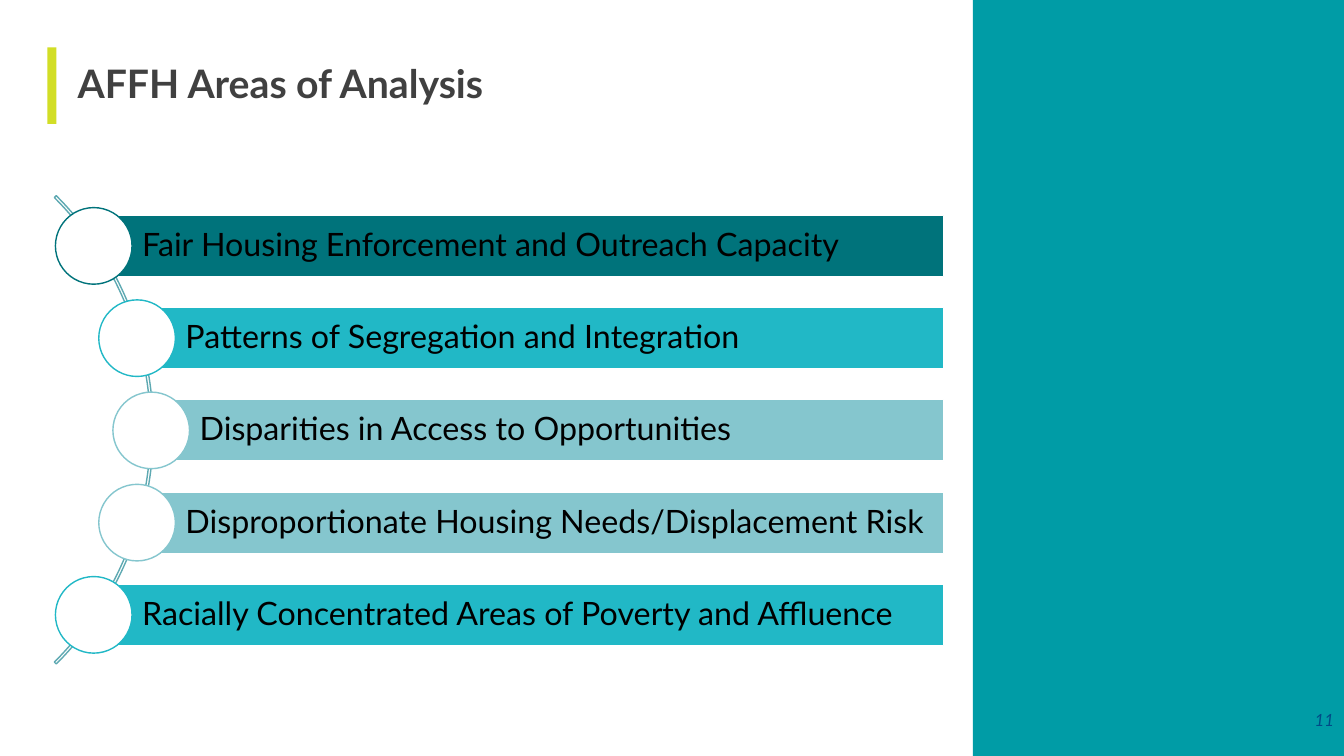
from pptx import Presentation
from pptx.dml.color import RGBColor
from pptx.enum.shapes import MSO_SHAPE
from pptx.enum.text import MSO_ANCHOR, MSO_AUTO_SIZE, PP_ALIGN
from pptx.util import Inches, Pt

WHITE = RGBColor(0xFF, 0xFF, 0xFF)
BLACK = RGBColor(0x00, 0x00, 0x00)
CHARCOAL = RGBColor(0x40, 0x40, 0x40)
NAVY = RGBColor(0x00, 0x4B, 0x87)
PANEL_TEAL = RGBColor(0x00, 0x9C, 0xA6)
LIME = RGBColor(0xD2, 0xDE, 0x26)
ARC_TEAL = RGBColor(0x5E, 0xA9, 0xB2)
DARK_TEAL = RGBColor(0x00, 0x73, 0x7B)
BRIGHT_TEAL = RGBColor(0x21, 0xB8, 0xC6)
PALE_TEAL = RGBColor(0x85, 0xC6, 0xCE)

SLIDE_WIDTH, SLIDE_HEIGHT = 13.33, 7.5
PANEL_LEFT = 9.65
ARC_SIZE = 6.57
BAR_RIGHT, BAR_HEIGHT = 9.36, 0.61
CIRCLE_SIZE = 0.76
FIRST_CENTER, ROW_STEP = 2.44, 0.915

AREAS = [
    ("Fair Housing Enforcement and Outreach Capacity", 0.93, DARK_TEAL),
    ("Patterns of Segregation and Integration", 1.36, BRIGHT_TEAL),
    ("Disparities in Access to Opportunities", 1.5, PALE_TEAL),
    ("Disproportionate Housing Needs/Displacement Risk", 1.36, PALE_TEAL),
    ("Racially Concentrated Areas of Poverty and Affluence", 0.93, BRIGHT_TEAL),
]


def add_figure(kind, left, top, width, height, fill=None, line=None):
    figure = page.shapes.add_shape(
        kind, Inches(left), Inches(top), Inches(width), Inches(height))
    figure.shadow.inherit = False
    if fill is None:
        figure.fill.background()
    else:
        figure.fill.solid()
        figure.fill.fore_color.rgb = fill
    if line is None:
        figure.line.fill.background()
    else:
        figure.line.color.rgb = line
        figure.line.width = Pt(1)
    return figure


def write_text(box, text, size, color, insets, align=PP_ALIGN.LEFT):
    frame = box.text_frame
    frame.word_wrap = True
    frame.auto_size = MSO_AUTO_SIZE.NONE
    frame.vertical_anchor = MSO_ANCHOR.MIDDLE
    (frame.margin_left, frame.margin_top,
     frame.margin_right, frame.margin_bottom) = [Inches(inset) for inset in insets]
    para = frame.paragraphs[0]
    para.alignment = align
    para.line_spacing = 0.9
    span = para.add_run()
    span.text = text
    span.font.name = "Lato"
    span.font.size = Pt(size)
    span.font.color.rgb = color
    return span


deck = Presentation()
deck.slide_width = Inches(SLIDE_WIDTH)
deck.slide_height = Inches(SLIDE_HEIGHT)
page = deck.slides.add_slide(deck.slide_layouts[5])

add_figure(MSO_SHAPE.RECTANGLE, PANEL_LEFT, 0,
           SLIDE_WIDTH - PANEL_LEFT, SLIDE_HEIGHT, PANEL_TEAL)
add_figure(MSO_SHAPE.RECTANGLE, 0.47, 0.47, 0.09, 0.76, LIME)

title = page.shapes.title
title.left, title.top = Inches(0.57), Inches(0.47)
title.width, title.height = Inches(5.89), Inches(0.76)
heading = write_text(title, "AFFH Areas of Analysis", 28, CHARCOAL, (0.2, 0, 0, 0))
heading.font.bold = True

arc = add_figure(MSO_SHAPE.BLOCK_ARC, -5.05, 0.98, ARC_SIZE, ARC_SIZE, line=ARC_TEAL)
for index, value in enumerate((189, 27, 0.004)):
    arc.adjustments[index] = value

for row, (label, left, color) in enumerate(AREAS):
    center = FIRST_CENTER + row * ROW_STEP
    bar = add_figure(MSO_SHAPE.RECTANGLE, left, center - BAR_HEIGHT / 2,
                     BAR_RIGHT - left, BAR_HEIGHT, color, WHITE)
    write_text(bar, label, 23, BLACK, (0.48, 0.06, 0.06, 0.06))
    add_figure(MSO_SHAPE.OVAL, left - CIRCLE_SIZE / 2, center - CIRCLE_SIZE / 2,
               CIRCLE_SIZE, CIRCLE_SIZE, WHITE, color)

number_box = page.shapes.add_textbox(
    Inches(12.72), Inches(6.95), Inches(0.61), Inches(0.4))
number = write_text(number_box, "11", 12, NAVY, (0.1, 0.05, 0.1, 0.05), PP_ALIGN.RIGHT)
number.font.italic = True

deck.save("out.pptx")
